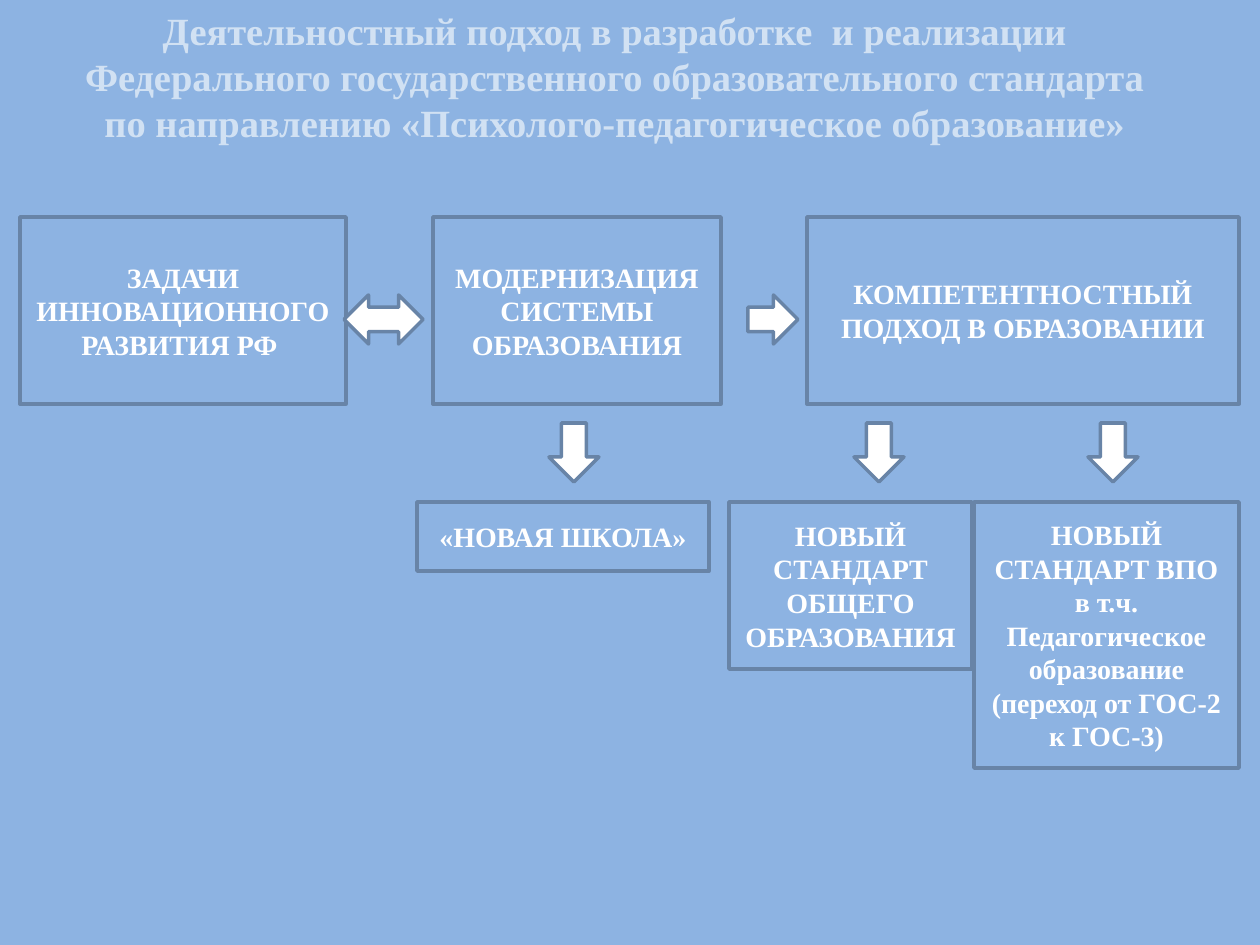
import pptx
import pptx.util
import pptx.dml.color
import pptx.enum.shapes
import pptx.enum.text

SHAPE = pptx.enum.shapes.MSO_SHAPE
EMU_PER_PX = 914400 / 126
COLORS = {"sky": "8DB3E2", "outline": "6884A7", "white": "FFFFFF", "title": "D1E1F3"}


def px(value):
    return pptx.util.Emu(round(value * EMU_PER_PX))


def color(name):
    return pptx.dml.color.RGBColor.from_string(COLORS[name])


class SlideBuilder:
    font = "Times New Roman"
    line_width = 2

    def __init__(self, page):
        self.page = page
        page.background.fill.solid()
        page.background.fill.fore_color.rgb = color("sky")

    def label(self, box, text, size, ink):
        frame = box.text_frame
        frame.word_wrap = True
        frame.vertical_anchor = pptx.enum.text.MSO_ANCHOR.MIDDLE
        para = frame.paragraphs[0]
        para.alignment = pptx.enum.text.PP_ALIGN.CENTER
        span = para.add_run()
        span.text = text
        span.font.name = self.font
        span.font.size = pptx.util.Pt(size)
        span.font.bold = True
        span.font.color.rgb = color(ink)

    def title(self, left, top, width, height, text):
        box = self.page.shapes.add_textbox(px(left), px(top), px(width), px(height))
        self.label(box, text, 22, "title")

    def shape(self, kind, left, top, width, height, fill):
        shape = self.page.shapes.add_shape(kind, px(left), px(top), px(width), px(height))
        shape.shadow.inherit = False
        shape.fill.solid()
        shape.fill.fore_color.rgb = color(fill)
        shape.line.color.rgb = color("outline")
        shape.line.width = pptx.util.Pt(self.line_width)
        return shape

    def process(self, left, top, width, height, text):
        box = self.shape(SHAPE.FLOWCHART_PROCESS, left, top, width, height, "sky")
        self.label(box, text, 16, "white")

    def arrow(self, kind, left, top, width, height):
        self.shape(kind, left, top, width, height, "white")


def main():
    deck = pptx.Presentation()
    deck.slide_width, deck.slide_height = px(1260), px(945)
    slide = SlideBuilder(deck.slides.add_slide(deck.slide_layouts[6]))

    slide.title(69, 0, 1091, 152,
                "Деятельностный подход в разработке  и реализации Федерального "
                "государственного образовательного стандарта по направлению "
                "«Психолого-педагогическое образование»")

    for left, width, text in [
        (20, 326, "ЗАДАЧИ ИННОВАЦИОННОГО РАЗВИТИЯ РФ "),
        (433, 288, "МОДЕРНИЗАЦИЯ СИСТЕМЫ ОБРАЗОВАНИЯ"),
        (807, 432, "КОМПЕТЕНТНОСТНЫЙ ПОДХОД В ОБРАЗОВАНИИ"),
    ]:
        slide.process(left, 217, width, 187, text)

    for left, width, height, text in [
        (417, 292, 69, "«НОВАЯ ШКОЛА»"),
        (729, 243, 167, "НОВЫЙ СТАНДАРТ ОБЩЕГО ОБРАЗОВАНИЯ"),
        (974, 265, 266, "НОВЫЙ СТАНДАРТ ВПО в т.ч. Педагогическое образование "
                        "(переход от ГОС-2 к ГОС-3)"),
    ]:
        slide.process(left, 502, width, height, text)

    for left in (549, 854, 1088):
        slide.arrow(SHAPE.DOWN_ARROW, left, 423, 50, 59)
    slide.arrow(SHAPE.RIGHT_ARROW, 748, 295, 50, 49)
    slide.arrow(SHAPE.LEFT_RIGHT_ARROW, 344, 295, 79, 49)

    deck.save("out.pptx")


if __name__ == "__main__":
    main()
